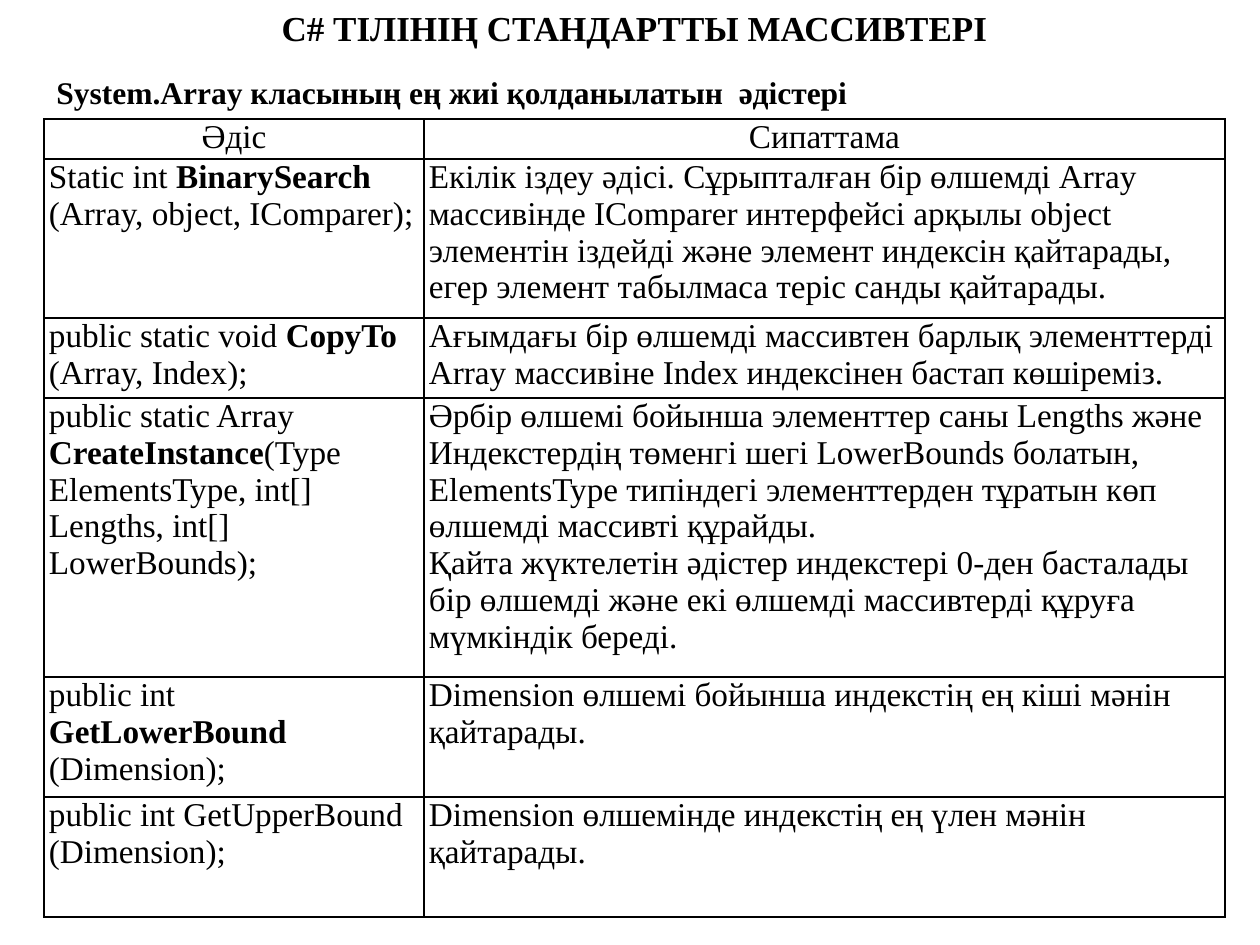
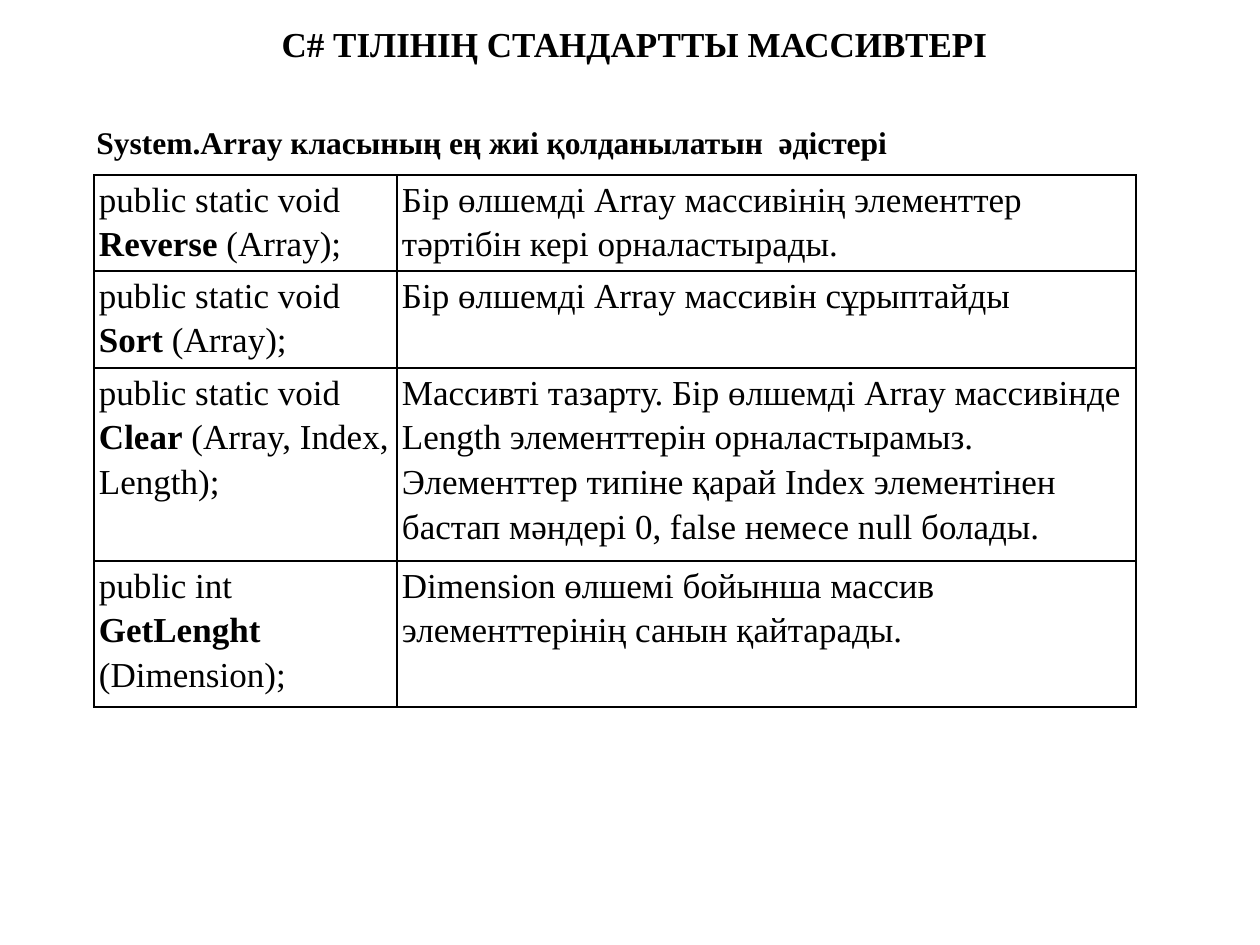
from typing import NamedTuple

from lxml import etree
from pptx import Presentation
from pptx.dml.color import RGBColor
from pptx.enum.text import MSO_ANCHOR, MSO_AUTO_SIZE, PP_ALIGN
from pptx.oxml.ns import qn
from pptx.util import Emu, Pt

PX_PER_INCH = 126
EMU_PER_INCH = 914400
SLIDE_WIDTH, SLIDE_HEIGHT = 1260, 945
TITLE_ONLY_LAYOUT = 5

FONT = "Times New Roman"
BLACK = "000000"
TITLE_SIZE, SUBTITLE_SIZE = 20, 18
CELL_INSET = 5
BORDER_WIDTH = Pt(1)
BORDER_SIDES = ("a:lnL", "a:lnR", "a:lnT", "a:lnB")

LEFT, CENTER = PP_ALIGN.LEFT, PP_ALIGN.CENTER
TOP = MSO_ANCHOR.TOP
NO_AUTOFIT = MSO_AUTO_SIZE.NONE

TITLE = "C# ТІЛІНІҢ СТАНДАРТТЫ МАССИВТЕРІ"
SUBTITLE = "System.Array класының ең жиі қолданылатын  әдістері"


class Box(NamedTuple):
    left: int
    top: int
    width: int
    height: int


class TextRun(NamedTuple):
    text: str
    bold: bool = False


class Method(NamedTuple):
    """One table row: a signature with its name in bold, and its description."""
    height: int
    prefix: str
    name: str
    arguments: str
    description: list[str]


class MethodSlide(NamedTuple):
    title_box: Box
    subtitle_box: Box
    table_left: int
    table_top: int
    column_widths: tuple[int, int]
    font_size: int
    line_spacing: float
    header: tuple[str, ...]
    header_height: int
    methods: list[Method]


METHOD_SLIDES = [
    MethodSlide(
        title_box=Box(44, 0, 1181, 55),
        subtitle_box=Box(44, 67, 824, 50),
        table_left=44, table_top=119, column_widths=(380, 801),
        font_size=19, line_spacing=1.0,
        header=("Әдіс", "Сипаттама"), header_height=40,
        methods=[
            Method(159, "Static int ", "BinarySearch", " (Array, object, IComparer);", [
                "Екілік іздеу әдісі. Сұрыпталған бір өлшемді Array массивінде "
                "IComparer интерфейсі арқылы object элементін іздейді және элемент "
                "индексін қайтарады, егер элемент табылмаса теріс санды қайтарады."]),
            Method(80, "public static void ", "CopyTo", " (Array, Index);", [
                "Ағымдағы бір өлшемді массивтен барлық элементтерді Array массивіне "
                "Index индексінен бастап көшіреміз."]),
            Method(279, "public static Array ", "CreateInstance",
                   "(Type ElementsType, int[] Lengths, int[] LowerBounds);", [
                "Әрбір өлшемі бойынша элементтер саны Lengths және Индекстердің "
                "төменгі шегі LowerBounds болатын, ElementsType типіндегі "
                "элементтерден тұратын көп өлшемді массивті құрайды.",
                "Қайта жүктелетін әдістер индекстері 0-ден басталады бір өлшемді "
                "және екі өлшемді массивтерді құруға мүмкіндік береді."]),
            Method(120, "public int ", "GetLowerBound", " (Dimension);", [
                "Dimension өлшемі бойынша индекстің ең кіші мәнін қайтарады."]),
            Method(120, "public int GetUpperBound (Dimension);", "", "", [
                "Dimension өлшемінде индекстің ең үлен мәнін қайтарады."]),
        ]),
    MethodSlide(
        title_box=Box(44, 16, 1181, 55),
        subtitle_box=Box(84, 117, 824, 50),
        table_left=94, table_top=175, column_widths=(303, 739),
        font_size=20, line_spacing=1.15,
        header=(), header_height=0,
        methods=[
            Method(96, "public static void ", "Reverse", " (Array);", [
                "Бір өлшемді Array массивінің элементтер тәртібін кері "
                "орналастырады."]),
            Method(97, "public static void ", "Sort", " (Array);", [
                "Бір өлшемді Array массивін сұрыптайды"]),
            Method(193, "public static void ", "Clear", " (Array, Index, Length);", [
                "Массивті тазарту. Бір өлшемді Array массивінде Length элементтерін "
                "орналастырамыз. Элементтер типіне қарай Index элементінен бастап "
                "мәндері 0, false немесе null болады."]),
            Method(146, "public int ", "GetLenght", " (Dimension);", [
                "Dimension өлшемі бойынша массив элементтерінің санын қайтарады."]),
        ]),
]


def px(length: int) -> Emu:
    return Emu(round(length * EMU_PER_INCH / PX_PER_INCH))


def color(hex_code: str) -> RGBColor:
    return RGBColor.from_string(hex_code)


def write_paragraphs(text_frame, paragraphs: list[list[TextRun]], size: int,
                     alignment=LEFT, line_spacing: float = 1.0) -> None:
    for index, text_runs in enumerate(paragraphs):
        paragraph = text_frame.add_paragraph() if index else text_frame.paragraphs[0]
        paragraph.alignment = alignment
        paragraph.line_spacing = line_spacing
        for text_run in text_runs:
            run = paragraph.add_run()
            run.text = text_run.text
            run.font.name = FONT
            run.font.size = Pt(size)
            run.font.bold = text_run.bold
            run.font.color.rgb = color(BLACK)


def write_heading(shape, box: Box, text: str, size: int, alignment) -> None:
    shape.left, shape.top, shape.width, shape.height = map(px, box)
    text_frame = shape.text_frame
    text_frame.word_wrap = True
    text_frame.auto_size = NO_AUTOFIT
    text_frame.vertical_anchor = TOP
    write_paragraphs(text_frame, [[TextRun(text, True)]], size, alignment)


def format_cell(cell) -> None:
    """Give the cell black borders, narrow side margins and no fill."""
    cell.margin_left = cell.margin_right = px(CELL_INSET)
    cell.margin_top = cell.margin_bottom = 0
    properties = cell._tc.get_or_add_tcPr()
    for side in BORDER_SIDES:
        line = etree.SubElement(properties, qn(side), w=str(BORDER_WIDTH))
        fill = etree.SubElement(line, qn("a:solidFill"))
        etree.SubElement(fill, qn("a:srgbClr"), val=BLACK)
    cell.fill.background()


def add_method_table(slide, content: MethodSlide) -> None:
    heights = [method.height for method in content.methods]
    if content.header:
        heights.insert(0, content.header_height)
    box = Box(content.table_left, content.table_top,
              sum(content.column_widths), sum(heights))
    table = slide.shapes.add_table(
        len(heights), len(content.column_widths), *map(px, box)).table
    table.first_row = table.horz_banding = False
    for column, width in zip(table.columns, content.column_widths):
        column.width = px(width)
    for row, height in zip(table.rows, heights):
        row.height = px(height)
    for cell in table.iter_cells():
        format_cell(cell)

    for column_index, label in enumerate(content.header):
        write_paragraphs(table.cell(0, column_index).text_frame, [[TextRun(label)]],
                         content.font_size, CENTER, content.line_spacing)
    first_method_row = len(heights) - len(content.methods)
    for row_index, method in enumerate(content.methods, first_method_row):
        parts = (TextRun(method.prefix), TextRun(method.name, True),
                 TextRun(method.arguments))
        signature = [[part for part in parts if part.text]]
        description = [[TextRun(text)] for text in method.description]
        for column_index, paragraphs in enumerate((signature, description)):
            write_paragraphs(table.cell(row_index, column_index).text_frame, paragraphs,
                             content.font_size, line_spacing=content.line_spacing)


def add_method_slide(presentation, content: MethodSlide) -> None:
    slide = presentation.slides.add_slide(presentation.slide_layouts[TITLE_ONLY_LAYOUT])
    write_heading(slide.shapes.title, content.title_box, TITLE, TITLE_SIZE, CENTER)
    subtitle = slide.shapes.add_textbox(*map(px, content.subtitle_box))
    write_heading(subtitle, content.subtitle_box, SUBTITLE, SUBTITLE_SIZE, LEFT)
    add_method_table(slide, content)


def main() -> None:
    presentation = Presentation()
    presentation.slide_width = px(SLIDE_WIDTH)
    presentation.slide_height = px(SLIDE_HEIGHT)
    for content in METHOD_SLIDES:
        add_method_slide(presentation, content)
    presentation.save("out.pptx")


if __name__ == "__main__":
    main()
